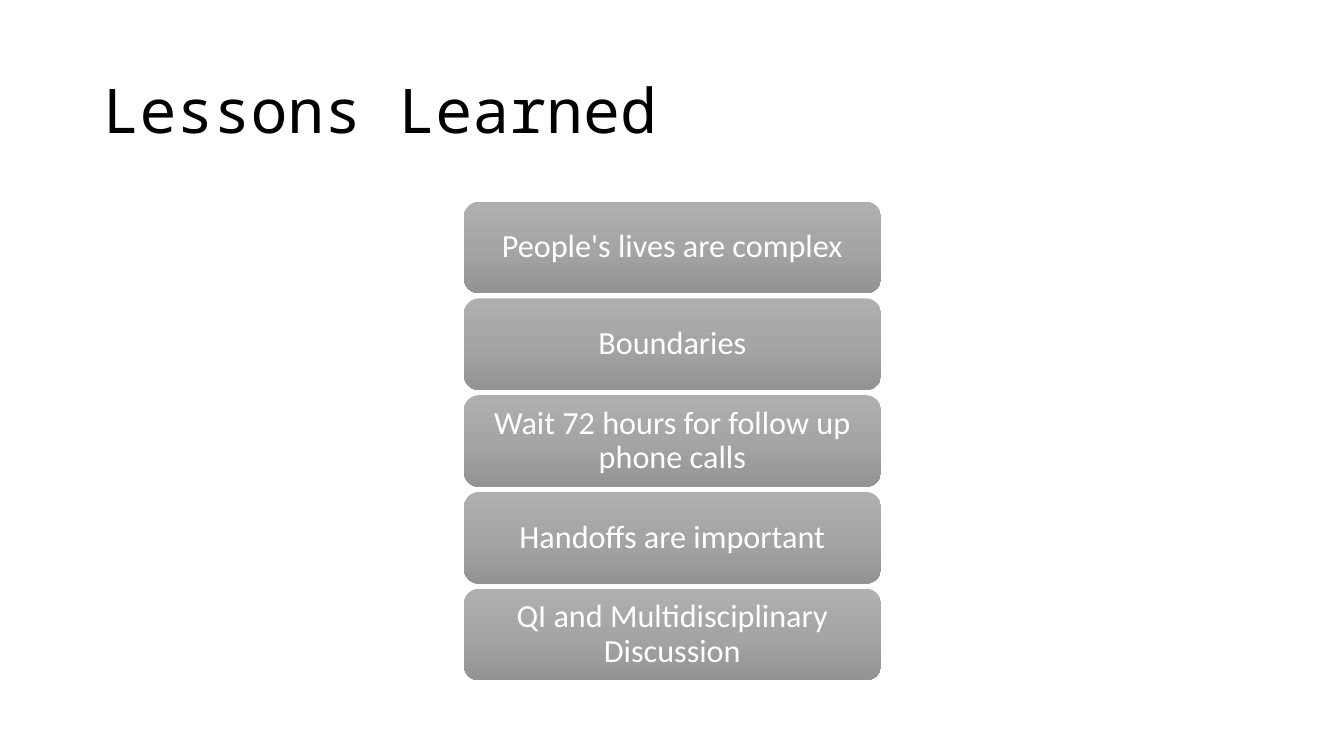
from copy import deepcopy
from dataclasses import dataclass

from pptx import Presentation
from pptx.dml.color import RGBColor as RGB
from pptx.enum.shapes import MSO_SHAPE as SHAPE
from pptx.enum.text import MSO_ANCHOR as ANCHOR, PP_ALIGN as ALIGN
from pptx.oxml.ns import qn
from pptx.shapes.autoshape import Shape
from pptx.slide import Slide
from pptx.util import Inches, Pt

COLORS = {
    "title": "000000",
    "label": "FFFFFF",
    "top": "AFAFAF",
    "middle": "A5A5A5",
    "bottom": "939393",
}
FIRST_TOP = 2.0
STEP = 0.96


@dataclass
class Lesson:
    text: str
    top: float
    left: float = 4.6
    width: float = 4.14
    height: float = 0.91


LESSONS = [
    Lesson(text, FIRST_TOP + i * STEP)
    for i, text in enumerate([
        "People's lives are complex",
        "Boundaries",
        "Wait 72 hours for follow up phone calls",
        "Handoffs are important",
        "QI and Multidisciplinary Discussion",
    ])
]


def write(sp: Shape, text: str, *, font: str, size: float, color: str,
          align: ALIGN = ALIGN.LEFT) -> None:
    tf = sp.text_frame
    tf.word_wrap = True
    tf.vertical_anchor = ANCHOR.MIDDLE
    tf.margin_left = tf.margin_right = Inches(0.1)
    tf.margin_top = tf.margin_bottom = Inches(0.05)
    p = tf.paragraphs[0]
    p.alignment = align
    p.line_spacing = 0.9
    r = p.add_run()
    r.text = text
    r.font.name = font
    r.font.size = Pt(size)
    r.font.color.rgb = RGB.from_string(COLORS[color])


def shade(sp: Shape) -> None:
    sp.fill.gradient()
    sp.fill.gradient_angle = 270
    stops = sp._element.spPr.find(qn("a:gradFill")).find(qn("a:gsLst"))
    stops.append(deepcopy(stops[0]))
    for i, name in enumerate(("top", "middle", "bottom")):
        stop = sp.fill.gradient_stops[i]
        stop.position = i / 2
        stop.color.rgb = RGB.from_string(COLORS[name])


def add_lesson(s: Slide, lesson: Lesson) -> None:
    sp = s.shapes.add_shape(
        SHAPE.ROUNDED_RECTANGLE, Inches(lesson.left), Inches(lesson.top),
        Inches(lesson.width), Inches(lesson.height))
    sp.shadow.inherit = False
    sp.line.fill.background()
    shade(sp)
    write(sp, lesson.text, font="Calibri", size=23, color="label",
          align=ALIGN.CENTER)


def main() -> None:
    prs = Presentation()
    prs.slide_width = Inches(13.33)
    prs.slide_height = Inches(7.5)
    s = prs.slides.add_slide(prs.slide_layouts[6])
    title = s.shapes.add_textbox(
        Inches(0.92), Inches(0.4), Inches(11.5), Inches(1.45))
    write(title, "Lessons Learned", font="Noto Sans Mono", size=44,
          color="title")
    for lesson in LESSONS:
        add_lesson(s, lesson)
    prs.save("out.pptx")


if __name__ == "__main__":
    main()
